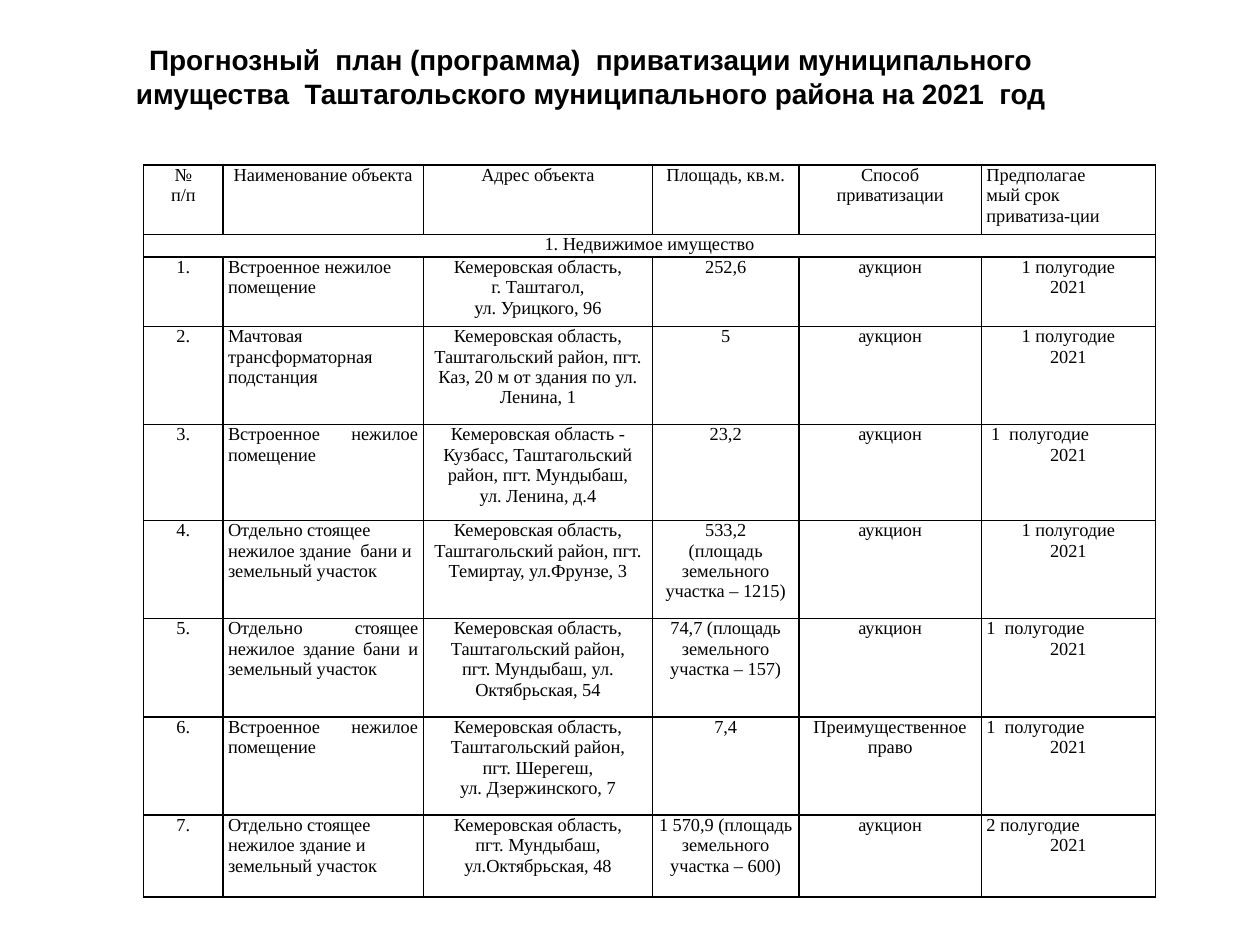
from lxml import etree
from pptx import Presentation, util as u
from pptx.dml.color import RGBColor
from pptx.enum import text
from pptx.oxml.ns import qn

LEFT, CENTER, JUSTIFY = text.PP_ALIGN.LEFT, text.PP_ALIGN.CENTER, text.PP_ALIGN.JUSTIFY
BLACK = "000000"

# Content: each line of a cell is a paragraph
TITLE = ("Прогнозный  план (программа)  приватизации муниципального "
         "имущества  Таштагольского муниципального района на 2021  год")
HEADERS = ["№\nп/п", "Наименование объекта", "Адрес объекта", "Площадь, кв.м.",
           "Способ\nприватизации", "Предполагае\nмый срок\nприватиза-ции"]
SECTION = "1. Недвижимое имущество"

# Name, name alignment, address, area, method, half-year, half-year alignment
OBJECTS = [
    ("Встроенное нежилое помещение", LEFT,
     "Кемеровская область,\nг. Таштагол,\nул. Урицкого, 96",
     "252,6", "аукцион", "1 полугодие", CENTER),
    ("Мачтовая трансформаторная подстанция", LEFT,
     "Кемеровская область, Таштагольский район, пгт. Каз, 20 м от здания по ул. Ленина, 1",
     "5", "аукцион", "1 полугодие", CENTER),
    ("Встроенное нежилое помещение", JUSTIFY,
     "Кемеровская область - Кузбасс, Таштагольский район, пгт. Мундыбаш,\nул. Ленина, д.4",
     "23,2", "аукцион", " 1  полугодие", LEFT),
    ("Отдельно стоящее нежилое здание  бани и земельный участок", LEFT,
     "Кемеровская область, Таштагольский район, пгт. Темиртау, ул.Фрунзе, 3",
     "533,2\n(площадь земельного участка – 1215)", "аукцион", "1 полугодие", CENTER),
    ("Отдельно стоящее нежилое здание бани и земельный участок", JUSTIFY,
     "Кемеровская область, Таштагольский район,\nпгт. Мундыбаш, ул. Октябрьская, 54",
     "74,7 (площадь земельного участка – 157)", "аукцион", "1  полугодие", LEFT),
    ("Встроенное нежилое помещение", JUSTIFY,
     "Кемеровская область, Таштагольский район,\nпгт. Шерегеш,\nул. Дзержинского, 7",
     "7,4", "Преимущественное право", "1  полугодие", LEFT),
    ("Отдельно стоящее нежилое здание и земельный участок", LEFT,
     "Кемеровская область,\nпгт. Мундыбаш, ул.Октябрьская, 48",
     "1 570,9 (площадь земельного участка – 600)", "аукцион", "2 полугодие", LEFT),
]
YEAR = "2021"
COLUMN_WIDTHS = [0.63, 1.59, 1.82, 1.16, 1.45, 1.38]
ROW_HEIGHTS = [0.55, 0.18, 0.55, 0.78, 0.76, 0.78, 0.78, 0.78, 0.65]


def color(value):
    return RGBColor.from_string(value)


def write(frame, lines, font_name, size, bold=False):
    """Fill a text frame with (text, alignment) paragraphs."""
    for index, (line, alignment) in enumerate(lines):
        paragraph = frame.paragraphs[0] if index == 0 else frame.add_paragraph()
        paragraph.alignment = alignment
        run = paragraph.add_run()
        run.text = line
        run.font.name, run.font.size, run.font.bold = font_name, u.Pt(size), bold
        run.font.color.rgb = color(BLACK)


def aligned(content, alignment=CENTER):
    return [(line, alignment) for line in content.split("\n")]


def format_cell(cell):
    """Set narrow margins, no fill and thin black borders."""
    cell.margin_left = cell.margin_right = u.Inches(0.04)
    cell.margin_top = cell.margin_bottom = 0
    properties = cell._tc.get_or_add_tcPr()
    for side in ("a:lnL", "a:lnR", "a:lnT", "a:lnB"):
        line = etree.SubElement(properties, qn(side), w=str(u.Pt(1)))
        fill = etree.SubElement(line, qn("a:solidFill"))
        etree.SubElement(fill, qn("a:srgbClr"), val=BLACK)
    cell.fill.background()


presentation = Presentation()
presentation.slide_width, presentation.slide_height = u.Inches(10), u.Inches(7.5)
slide = presentation.slides.add_slide(presentation.slide_layouts[6])

# Title
title = slide.shapes.add_textbox(u.Inches(0.91), u.Inches(0.29), u.Inches(7.56), u.Inches(0.64))
title.text_frame.word_wrap = True
write(title.text_frame, aligned(TITLE), "Arial", 16, bold=True)

# Table rows as lists of paragraphs
rows = [[aligned(header) for header in HEADERS[:-1]] + [aligned(HEADERS[-1], LEFT)],
        [aligned(SECTION)]]
for number, (name, name_alignment, address, area, method, period, period_alignment) in enumerate(OBJECTS, 1):
    rows.append([aligned(f"{number}."), aligned(name, name_alignment), aligned(address),
                 aligned(area), aligned(method),
                 [(period, period_alignment), (YEAR, CENTER)]])

# Table
table = slide.shapes.add_table(
    len(rows), len(COLUMN_WIDTHS), u.Inches(1.14), u.Inches(1.31),
    u.Inches(sum(COLUMN_WIDTHS)), u.Inches(sum(ROW_HEIGHTS))).table
table.first_row = table.horz_banding = False
for column, width in zip(table.columns, COLUMN_WIDTHS):
    column.width = u.Inches(width)
for row, height in zip(table.rows, ROW_HEIGHTS):
    row.height = u.Inches(height)
for cell in table.iter_cells():
    format_cell(cell)
table.cell(1, 0).merge(table.cell(1, len(COLUMN_WIDTHS) - 1))
for row, contents in zip(table.rows, rows):
    for cell, lines in zip(row.cells, contents):
        write(cell.text_frame, lines, "Times New Roman", 10.5)

presentation.save("out.pptx")
